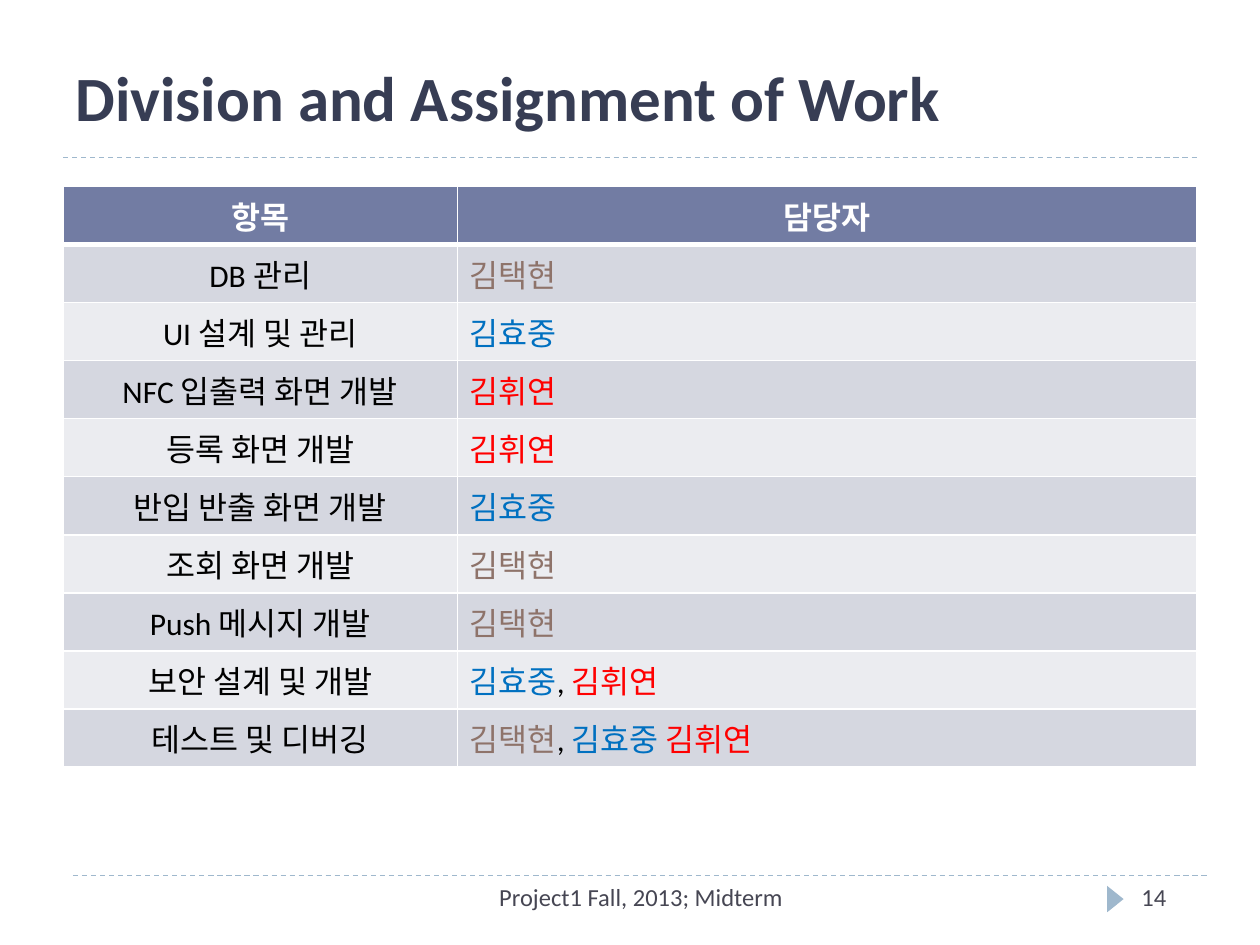
import pptx
import pptx.util
import pptx.dml.color
import pptx.enum.dml
import pptx.enum.shapes
import pptx.enum.text
import pptx.oxml
import pptx.oxml.ns
import lxml.etree

Cm, Pt = pptx.util.Cm, pptx.util.Pt
RGBColor = pptx.dml.color.RGBColor
ALIGN = pptx.enum.text.PP_ALIGN
ANCHOR = pptx.enum.text.MSO_ANCHOR

WHITE = RGBColor(0xFF, 0xFF, 0xFF)
BLACK = RGBColor(0x00, 0x00, 0x00)
NAVY = RGBColor(0x37, 0x3D, 0x54)
SLATE = RGBColor(0x46, 0x46, 0x53)
PALE_BLUE = RGBColor(0x9F, 0xB8, 0xCD)
HEADER_FILL = RGBColor(0x72, 0x7C, 0xA3)
BAND_FILLS = [RGBColor(0xD5, 0xD7, 0xE0), RGBColor(0xEB, 0xEC, 0xF0)]
BROWN = RGBColor(0x8E, 0x73, 0x6A)
BLUE = RGBColor(0x00, 0x70, 0xC0)
RED = RGBColor(0xFF, 0x00, 0x00)

TAEK = ("김택현", BROWN)
HYO = ("김효중", BLUE)
HWI = ("김휘연", RED)
COMMA = (", ", BLACK)
ASSIGNMENTS = [
    ("DB 관리", [TAEK]),
    ("UI 설계 및 관리", [HYO]),
    ("NFC 입출력 화면 개발", [HWI]),
    ("등록 화면 개발", [HWI]),
    ("반입 반출 화면 개발", [HYO]),
    ("조회 화면 개발", [TAEK]),
    ("Push 메시지 개발", [TAEK]),
    ("보안 설계 및 개발", [HYO, COMMA, HWI]),
    ("테스트 및 디버깅", [TAEK, COMMA, ("김효중 ", BLUE), HWI]),
]


def write_runs(frame, runs, align, size, bold=False):
    """Fill the first paragraph with (text, colour) runs."""
    paragraph = frame.paragraphs[0]
    paragraph.alignment = align
    for text, color in runs:
        run = paragraph.add_run()
        run.text = text
        font_format = {"name": "Calibri", "size": Pt(size), "bold": bold}
        for attribute, value in font_format.items():
            setattr(run.font, attribute, value)
        run.font.color.rgb = color


def style_cell(cell, fill, top, bottom):
    """Give the cell its fill and white borders; top and bottom are in points."""
    properties = cell._tc.get_or_add_tcPr()
    for side, width in {"L": 1, "R": 1, "T": top, "B": bottom}.items():
        properties.append(pptx.oxml.parse_xml(
            f'<a:ln{side} {pptx.oxml.ns.nsdecls("a")} w="{Pt(width)}">'
            f'<a:solidFill><a:srgbClr val="{WHITE}"/></a:solidFill></a:ln{side}>'))
    cell.fill.solid()
    cell.fill.fore_color.rgb = fill


deck = pptx.Presentation()
deck.slide_width, deck.slide_height = Cm(25.4), Cm(19.05)
slide = deck.slides.add_slide(deck.slide_layouts[6])

# Dashed rules above the footer and below the title
for left, top in [(1.47, 17.65), (1.27, 3.18)]:
    rule = slide.shapes.add_connector(
        pptx.enum.shapes.MSO_CONNECTOR.STRAIGHT,
        Cm(left), Cm(top), Cm(left + 22.86), Cm(top))
    rule.line.color.rgb = PALE_BLUE
    rule.line.width = Pt(0.75)
    rule.line.dash_style = pptx.enum.dml.MSO_LINE.DASH
    lxml.etree.SubElement(rule._element.spPr, pptx.oxml.ns.qn("a:effectLst"))

page_marker = slide.shapes.add_shape(
    pptx.enum.shapes.MSO_SHAPE.ISOSCELES_TRIANGLE,
    Cm(22.22), Cm(17.96), Cm(0.53), Cm(0.33))
page_marker.rotation = 90
page_marker.shadow.inherit = False
page_marker.fill.solid()
page_marker.fill.fore_color.rgb = PALE_BLUE
page_marker.line.fill.background()

# Title, footer and page number
for text, box, size, color, bold, align, anchor in [
    ("Division and Assignment of Work", (1.27, 1.02, 22.86, 1.8),
     36, NAVY, True, ALIGN.LEFT, ANCHOR.BOTTOM),
    ("Project1 Fall, 2013; Midterm", (8.06, 17.65, 9.73, 1.02),
     14, SLATE, False, ALIGN.CENTER, ANCHOR.TOP),
    ("14", (22.76, 17.65, 1.91, 1.02),
     14, SLATE, False, ALIGN.LEFT, ANCHOR.TOP),
]:
    frame = slide.shapes.add_textbox(*map(Cm, box)).text_frame
    frame.word_wrap = True
    frame.vertical_anchor = anchor
    write_runs(frame, [(text, color)], align, size, bold)

# Assignment table
row_count = len(ASSIGNMENTS) + 1
table = slide.shapes.add_table(
    row_count, 2, Cm(1.27), Cm(3.76), Cm(22.86), Cm(1.17 * row_count)).table
for column, width in zip(table.columns, [7.95, 14.91]):
    column.width = Cm(width)

for cell, heading in zip(table.rows[0].cells, ["항목", "담당자"]):
    style_cell(cell, HEADER_FILL, 1, 3)
    write_runs(cell.text_frame, [(heading, WHITE)], ALIGN.CENTER, 18, True)

for index, (task, people) in enumerate(ASSIGNMENTS):
    task_cell, people_cell = table.rows[index + 1].cells
    for cell in (task_cell, people_cell):
        style_cell(cell, BAND_FILLS[index % 2], 3 if index == 0 else 1, 1)
    write_runs(task_cell.text_frame, [(task, BLACK)], ALIGN.CENTER, 18)
    write_runs(people_cell.text_frame, people, ALIGN.LEFT, 18)

deck.save("out.pptx")
